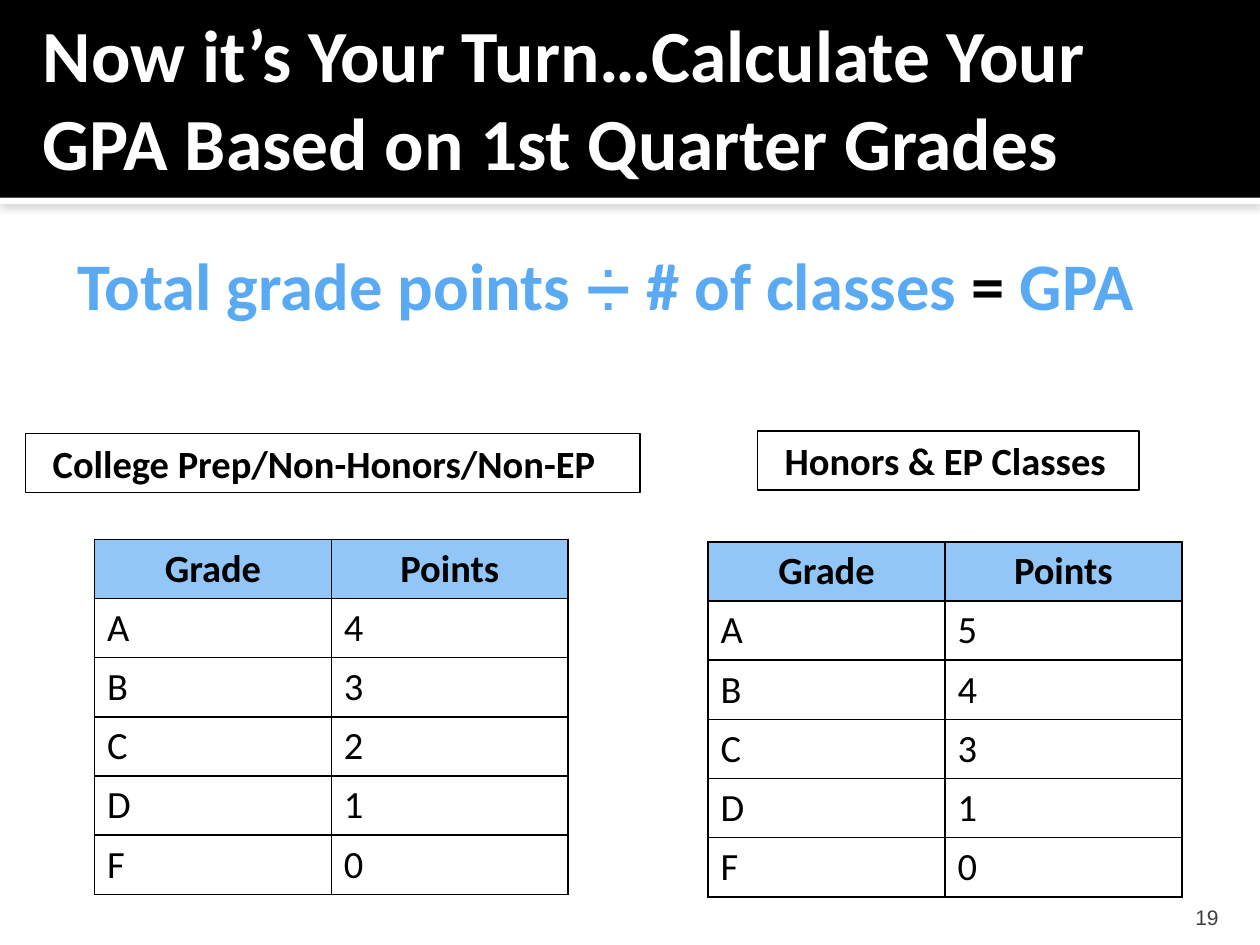
"""Build the GPA calculation slide with two grade-point tables."""
from dataclasses import dataclass

from lxml.etree import SubElement
from pptx import Presentation
from pptx.dml.color import RGBColor
from pptx.enum.shapes import MSO_SHAPE
from pptx.enum.text import MSO_ANCHOR, PP_ALIGN
from pptx.oxml import parse_xml
from pptx.oxml.ns import nsdecls, qn
from pptx.util import Inches, Pt


@dataclass(frozen=True)
class Theme:
    """Colours, fonts and type sizes."""

    black: str = "000000"
    white: str = "FFFFFF"
    blue: str = "59AAF2"
    header: str = "91C6F7"
    grey: str = "3F3F3F"
    shadow: str = "808080"
    font: str = "Calibri"
    number_font: str = "Arial"
    title: int = 42
    formula: int = 38
    sign: int = 33
    body: int = 22
    number: int = 12


THEME = Theme()
TITLE = "Now it’s Your Turn…Calculate Your GPA Based on 1st Quarter Grades"
FORMULA = [
    ("Total grade points ", THEME.formula, THEME.blue),
    ("➗", THEME.sign, THEME.blue),
    (" # of classes ", THEME.formula, THEME.blue),
    ("= ", THEME.formula, THEME.black),
    ("GPA", THEME.formula, THEME.blue),
]
PAGE_NUMBER = "19"
HEADINGS = ("Grade", "Points")
GRADES = "ABCDF"
SCALES = [
    {"label": "College Prep/Non-Honors/Non-EP", "label_at": (0.2, 3.44, 4.88),
     "points": (4, 3, 2, 1, 0), "table_at": (0.75, 4.28)},
    {"label": "Honors & EP Classes", "label_at": (6.01, 3.42, 3.03),
     "points": (5, 4, 3, 1, 0), "table_at": (5.62, 4.3)},
]
ROW_HEIGHT, COLUMN_WIDTH = 0.47, 1.88
BAND_HEIGHT, STRIP_HEIGHT = 1.57, 0.05


def rgb(value):
    return RGBColor.from_string(value)


def add_span(para, text, size, color, bold=True, font=THEME.font):
    span = para.add_run()
    span.text = text
    span.font.name = font
    span.font.size = Pt(size)
    span.font.bold = bold
    span.font.color.rgb = rgb(color)


def set_frame(frame, anchor=MSO_ANCHOR.TOP, right=0.1, bottom=0.05):
    frame.word_wrap = True
    frame.vertical_anchor = anchor
    frame.margin_left, frame.margin_top = Inches(0.1), Inches(0.05)
    frame.margin_right, frame.margin_bottom = Inches(right), Inches(bottom)
    return frame.paragraphs[0]


def add_text(page, area, align, **frame_options):
    box = page.shapes.add_textbox(*map(Inches, area))
    para = set_frame(box.text_frame, **frame_options)
    para.alignment = align
    return para


def add_band(page, top, height, color):
    band = page.shapes.add_shape(
        MSO_SHAPE.RECTANGLE, 0, Inches(top), Inches(10), Inches(height))
    band.shadow.inherit = False
    band.fill.solid()
    band.fill.fore_color.rgb = rgb(color)
    band.line.fill.background()
    page.shapes.title.element.addprevious(band.element)
    return band


def add_header(page):
    strip = add_band(page, BAND_HEIGHT, STRIP_HEIGHT, THEME.white)
    effects = strip.element.spPr.find(qn("a:effectLst"))
    shadow = SubElement(effects, qn("a:outerShdw"), blurRad=str(Pt(5)),
                        dist=str(Pt(0.8)), dir="5400000", rotWithShape="0")
    color = SubElement(shadow, qn("a:srgbClr"), val=THEME.shadow)
    SubElement(color, qn("a:alpha"), val="59000")
    add_band(page, 0, BAND_HEIGHT, THEME.black)
    title = page.shapes.title
    title.left, title.top = Inches(0.24), Inches(-0.01)
    title.width, title.height = Inches(9.27), Inches(1.56)
    para = set_frame(title.text_frame, MSO_ANCHOR.MIDDLE, right=0.05)
    para.alignment = PP_ALIGN.LEFT
    add_span(para, TITLE, THEME.title, THEME.white)


def add_label(page, text, left, top, width):
    box = page.shapes.add_shape(
        MSO_SHAPE.RECTANGLE, *map(Inches, (left, top, width, ROW_HEIGHT)))
    box.shadow.inherit = False
    box.fill.background()
    box.line.color.rgb = rgb(THEME.black)
    box.line.width = Pt(0.75)
    para = set_frame(box.text_frame)
    para.alignment = PP_ALIGN.LEFT
    properties = para._p.get_or_add_pPr()
    properties.set("marL", str(Inches(0.12)))
    properties.set("indent", "0")
    add_span(para, text, THEME.body, THEME.black)


def fill_cell(cell, text, heading):
    properties = cell._tc.get_or_add_tcPr()
    for side in ("lnL", "lnR", "lnT", "lnB"):
        properties.append(parse_xml(
            f'<a:{side} {nsdecls("a")} w="{Pt(1)}"><a:solidFill>'
            f'<a:srgbClr val="{THEME.black}"/></a:solidFill></a:{side}>'))
    if heading:
        cell.fill.solid()
        cell.fill.fore_color.rgb = rgb(THEME.header)
    else:
        cell.fill.background()
    cell.margin_left = cell.margin_right = Inches(0.1)
    cell.margin_top = cell.margin_bottom = Inches(0.05)
    para = cell.text_frame.paragraphs[0]
    para.alignment = PP_ALIGN.CENTER if heading else PP_ALIGN.LEFT
    add_span(para, text, THEME.body, THEME.black, bold=heading)


def add_scale(page, points, left, top):
    rows = [HEADINGS, *zip(GRADES, map(str, points))]
    size = (COLUMN_WIDTH * len(HEADINGS), ROW_HEIGHT * len(rows))
    table = page.shapes.add_table(
        len(rows), len(HEADINGS), *map(Inches, (left, top, *size))).table
    table.first_row = table.horz_banding = False
    for column in table.columns:
        column.width = Inches(COLUMN_WIDTH)
    for row_index, values in enumerate(rows):
        table.rows[row_index].height = Inches(ROW_HEIGHT)
        for column_index, text in enumerate(values):
            fill_cell(table.cell(row_index, column_index), text, row_index == 0)


def main():
    deck = Presentation()
    deck.slide_width, deck.slide_height = Inches(10), Inches(7.5)
    page = deck.slides.add_slide(deck.slide_layouts[5])
    add_header(page)
    number = add_text(page, (8.97, 7.08, 0.8, 0.3), PP_ALIGN.RIGHT,
                      anchor=MSO_ANCHOR.BOTTOM, bottom=0)
    add_span(number, PAGE_NUMBER, THEME.number, THEME.grey,
             bold=False, font=THEME.number_font)
    for scale in SCALES:
        add_label(page, scale["label"], *scale["label_at"])
    for scale in SCALES:
        add_scale(page, scale["points"], *scale["table_at"])
    formula = add_text(page, (0.24, 1.89, 9.13, 0.74), PP_ALIGN.CENTER)
    for text, size, color in FORMULA:
        add_span(formula, text, size, color)
    deck.save("out.pptx")


if __name__ == "__main__":
    main()
